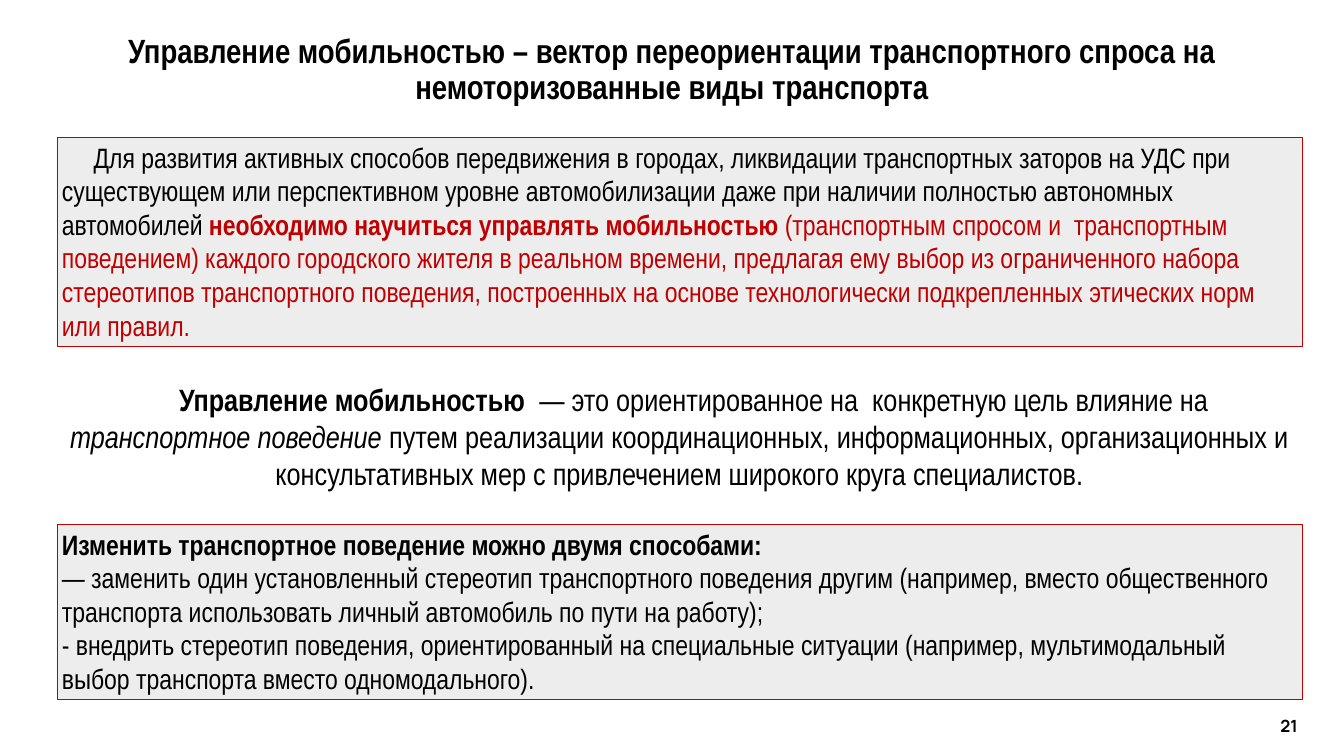
from pptx import Presentation
from pptx.dml.color import RGBColor
from pptx.enum.shapes import MSO_SHAPE
from pptx.enum.text import MSO_ANCHOR, PP_ALIGN
from pptx.util import Pt

RECTANGLE = MSO_SHAPE.RECTANGLE
TOP, MIDDLE = MSO_ANCHOR.TOP, MSO_ANCHOR.MIDDLE
LEFT, CENTER, RIGHT = PP_ALIGN.LEFT, PP_ALIGN.CENTER, PP_ALIGN.RIGHT

PX = 9144  # EMU per px, 100 px to the inch
COLORS = {"black": "000000", "red": "C00000", "panel": "EDEDED"}
BODY_FONT, NUMBER_FONT = "Arial Narrow", "Manrope"
BODY_LEFT, BODY_WIDTH = 113, 2472


def color(name):
    return RGBColor.from_string(COLORS[name])


def write(shape, paragraphs, size, align=LEFT, anchor=TOP, font=BODY_FONT, indent=0):
    """Each paragraph is a list of (text, style letters): b bold, i italic, r red."""
    frame = shape.text_frame
    frame.word_wrap = True
    frame.vertical_anchor = anchor
    for index, runs in enumerate(paragraphs):
        paragraph = frame.add_paragraph() if index else frame.paragraphs[0]
        paragraph.alignment = align
        if indent:
            properties = paragraph._p.get_or_add_pPr()
            properties.set("marL", "0")
            properties.set("indent", str(indent * PX))
        paragraph.font.name = font
        paragraph.font.size = Pt(size)
        for text, style in runs:
            run = paragraph.add_run()
            run.text = text
            run.font.name = font
            run.font.size = Pt(size)
            run.font.bold = "b" in style
            run.font.italic = "i" in style
            run.font.color.rgb = color("red" if "r" in style else "black")


presentation = Presentation()
presentation.slide_width = 2667 * PX
presentation.slide_height = 1500 * PX
slide = presentation.slides.add_slide(presentation.slide_layouts[6])

# Framed panels: the need for mobility management, the two ways to change behaviour
need = [[
    ("Для развития активных способов передвижения в городах, ликвидации транспортных "
     "заторов на УДС при существующем или перспективном уровне автомобилизации даже "
     "при наличии полностью автономных автомобилей ", ""),
    ("необходимо научиться управлять мобильностью ", "br"),
    ("(транспортным спросом и  транспортным поведением) каждого городского жителя "
     "в реальном времени, предлагая ему выбор из ограниченного набора стереотипов "
     "транспортного поведения, построенных на основе технологически подкрепленных "
     "этических норм или правил.", "r"),
]]
ways = [
    [("Изменить транспортное поведение можно двумя способами:", "b")],
    [("— заменить один установленный стереотип транспортного поведения другим "
      "(например, вместо общественного транспорта использовать личный автомобиль "
      "по пути на работу);", "")],
    [("- внедрить стереотип поведения, ориентированный на специальные ситуации "
      "(например, мультимодальный выбор транспорта вместо одномодального).", "")],
]
for top, height, paragraphs, indent in ((273, 414, need, 63), (1041, 347, ways, 0)):
    panel = slide.shapes.add_shape(
        RECTANGLE, BODY_LEFT * PX, top * PX, BODY_WIDTH * PX, height * PX)
    panel.shadow.inherit = False
    panel.fill.solid()
    panel.fill.fore_color.rgb = color("panel")
    panel.line.color.rgb = color("red")
    panel.line.width = Pt(0.75)
    write(panel, paragraphs, 40, indent=indent)

# Definition between the panels
definition = slide.shapes.add_textbox(BODY_LEFT * PX, 750 * PX, BODY_WIDTH * PX, 232 * PX)
write(definition, [[
    ("Управление мобильностью  ", "b"),
    ("— это ориентированное на  конкретную цель влияние на ", ""),
    ("транспортное поведение ", "i"),
    ("путем реализации координационных, информационных, организационных "
     "и консультативных мер с привлечением широкого круга специалистов.", ""),
]], 44, CENTER, indent=56)

# Title
title = slide.shapes.add_textbox(0, 84 * PX, 2667 * PX, 112 * PX)
write(title, [[("Управление мобильностью – вектор переориентации транспортного спроса "
                "на немоторизованные виды транспорта", "b")]], 48, CENTER, MIDDLE)
title.text_frame.paragraphs[0].line_spacing = 0.9

# Slide number
number = slide.shapes.add_textbox(2483 * PX, 1400 * PX, 102 * PX, 80 * PX)
write(number, [[("21", "b")]], 24, RIGHT, MIDDLE, NUMBER_FONT)

presentation.save("out.pptx")
